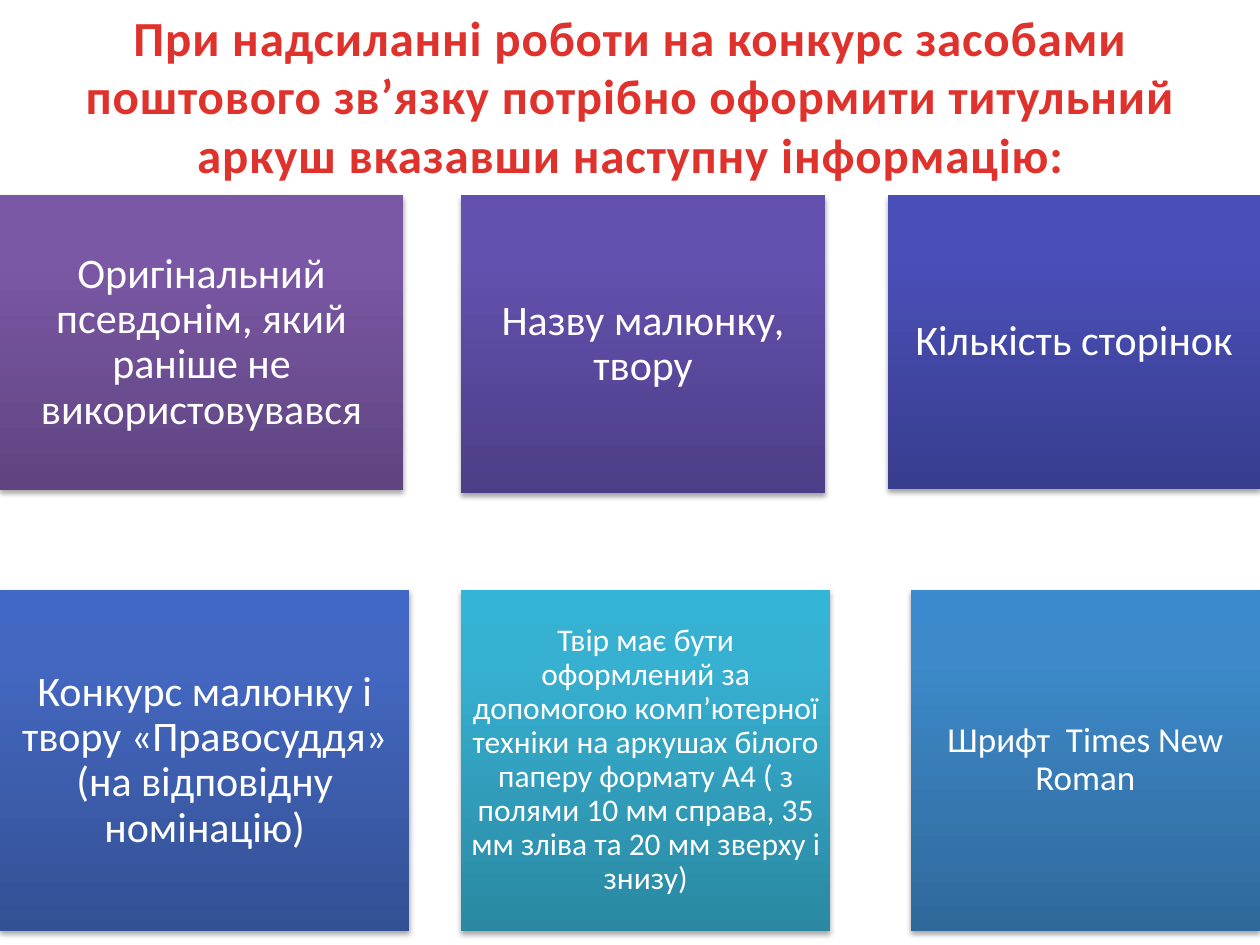
from lxml import etree
from pptx import Presentation
from pptx.dml.color import RGBColor
from pptx.enum.shapes import MSO_SHAPE
from pptx.enum.text import MSO_ANCHOR, PP_ALIGN
from pptx.oxml.ns import qn
from pptx.util import Pt

RECTANGLE = MSO_SHAPE.RECTANGLE
MIDDLE = MSO_ANCHOR.MIDDLE
CENTER = PP_ALIGN.CENTER

SLIDE_WIDTH, SLIDE_HEIGHT = 720, 540
FONT = "Calibri"
COLORS = {
    "title": "E0322D",
    "text": "FFFFFF",
    "shadow": "000000",
    "plum": ("5F4480", "7B58A6", "7C57A8"),
    "violet": ("4D3E87", "6451AF", "6450B2"),
    "indigo": ("393D8E", "4A4FB8", "484EBB"),
    "blue": ("345094", "4468C1", "4168C4"),
    "teal": ("2A88A2", "37B1D2", "34B4D6"),
    "azure": ("2F699B", "3D89C9", "3B8ACD"),
}
GRADIENT_STOPS = (0, 80, 100)

TITLE = ("При надсиланні роботи на конкурс засобами поштового зв’язку потрібно "
         "оформити титульний аркуш вказавши наступну інформацію:")
MIDDLE_LEFT = 263.5
UPPER_TOP, LOWER_TOP = 111.6, 337
LOWER_HEIGHT = 195

# column, top, width, height, gradient, text size, wording
REQUIREMENTS = [
    ("left", UPPER_TOP, 230.4, 168.5, "plum", 24,
     "Оригінальний псевдонім, який раніше не використовувався"),
    ("middle", UPPER_TOP, 208, 170, "violet", 24, "Назву малюнку, твору"),
    ("right", UPPER_TOP, 212.5, 168, "indigo", 24, "Кількість сторінок"),
    ("left", LOWER_TOP, 234, LOWER_HEIGHT, "blue", 24,
     "Конкурс малюнку і твору «Правосуддя» (на відповідну номінацію)"),
    ("middle", LOWER_TOP, 211, LOWER_HEIGHT, "teal", 18,
     "Твір має бути оформлений за допомогою комп’ютерної техніки на аркушах "
     "білого паперу формату А4 ( з полями 10 мм справа, 35 мм зліва та 20 мм "
     "зверху і знизу)"),
    ("right", LOWER_TOP, 199.5, LOWER_HEIGHT, "azure", 20,
     "Шрифт  Times New Roman"),
]


def write_text(frame, wording, color, line_spacing, font_format, frame_format):
    """Fill a frame with one centred paragraph and return its run."""
    for name, value in frame_format.items():
        setattr(frame, name, value)
    paragraph = frame.paragraphs[0]
    paragraph.alignment = CENTER
    paragraph.line_spacing = line_spacing
    run = paragraph.add_run()
    run.text = wording
    for name, value in font_format.items():
        setattr(run.font, name, value)
    run.font.color.rgb = RGBColor.from_string(COLORS[color])
    return run


def add_color(parent, color):
    element = etree.SubElement(parent, qn("a:srgbClr"))
    element.set("val", color)
    return element


def fill_gradient(shape, colors):
    """Give the shape a gradient that runs from bottom to top."""
    shape.fill.gradient()
    shape.fill.gradient_angle = 90
    stops = shape._element.spPr.find(".//" + qn("a:gsLst"))
    for stop in list(stops):
        stops.remove(stop)
    for position, color in zip(GRADIENT_STOPS, colors):
        stop = etree.SubElement(stops, qn("a:gs"))
        stop.set("pos", str(position * 1000))
        add_color(stop, color)


def add_soft_shadow(shape):
    shape.shadow.inherit = False
    effects = shape._element.spPr.find(qn("a:effectLst"))
    shadow = etree.SubElement(effects, qn("a:outerShdw"))
    settings = {"blurRad": Pt(3.1), "dist": Pt(1.8), "dir": 90 * 60000,
                "rotWithShape": 0}
    for name, value in settings.items():
        shadow.set(name, str(int(value)))
    alpha = etree.SubElement(add_color(shadow, COLORS["shadow"]), qn("a:alpha"))
    alpha.set("val", "35000")


def add_title(slide):
    title = slide.shapes.add_textbox(Pt(36.5), Pt(9.5), Pt(648), Pt(90))
    run = write_text(title.text_frame, TITLE, "title", 1.0,
                     {"name": FONT, "size": Pt(28), "bold": True},
                     {"word_wrap": True, "vertical_anchor": MIDDLE})
    run.font._element.set("spc", "50")


def add_requirement(slide, column, top, width, height, gradient, size, wording):
    left = {"left": 0, "middle": MIDDLE_LEFT, "right": SLIDE_WIDTH - width}[column]
    tile = slide.shapes.add_shape(RECTANGLE, Pt(left), Pt(top), Pt(width), Pt(height))
    fill_gradient(tile, COLORS[gradient])
    tile.line.fill.background()
    add_soft_shadow(tile)
    margin = Pt(0.3 * size)
    write_text(tile.text_frame, wording, "text", 0.9,
               {"name": FONT, "size": Pt(size)},
               {"word_wrap": True, "vertical_anchor": MIDDLE,
                "margin_left": margin, "margin_right": margin,
                "margin_top": margin, "margin_bottom": margin})


def main():
    presentation = Presentation()
    presentation.slide_width = Pt(SLIDE_WIDTH)
    presentation.slide_height = Pt(SLIDE_HEIGHT)
    slide = presentation.slides.add_slide(presentation.slide_layouts[6])
    add_title(slide)
    for requirement in REQUIREMENTS:
        add_requirement(slide, *requirement)
    presentation.save("out.pptx")


if __name__ == "__main__":
    main()
